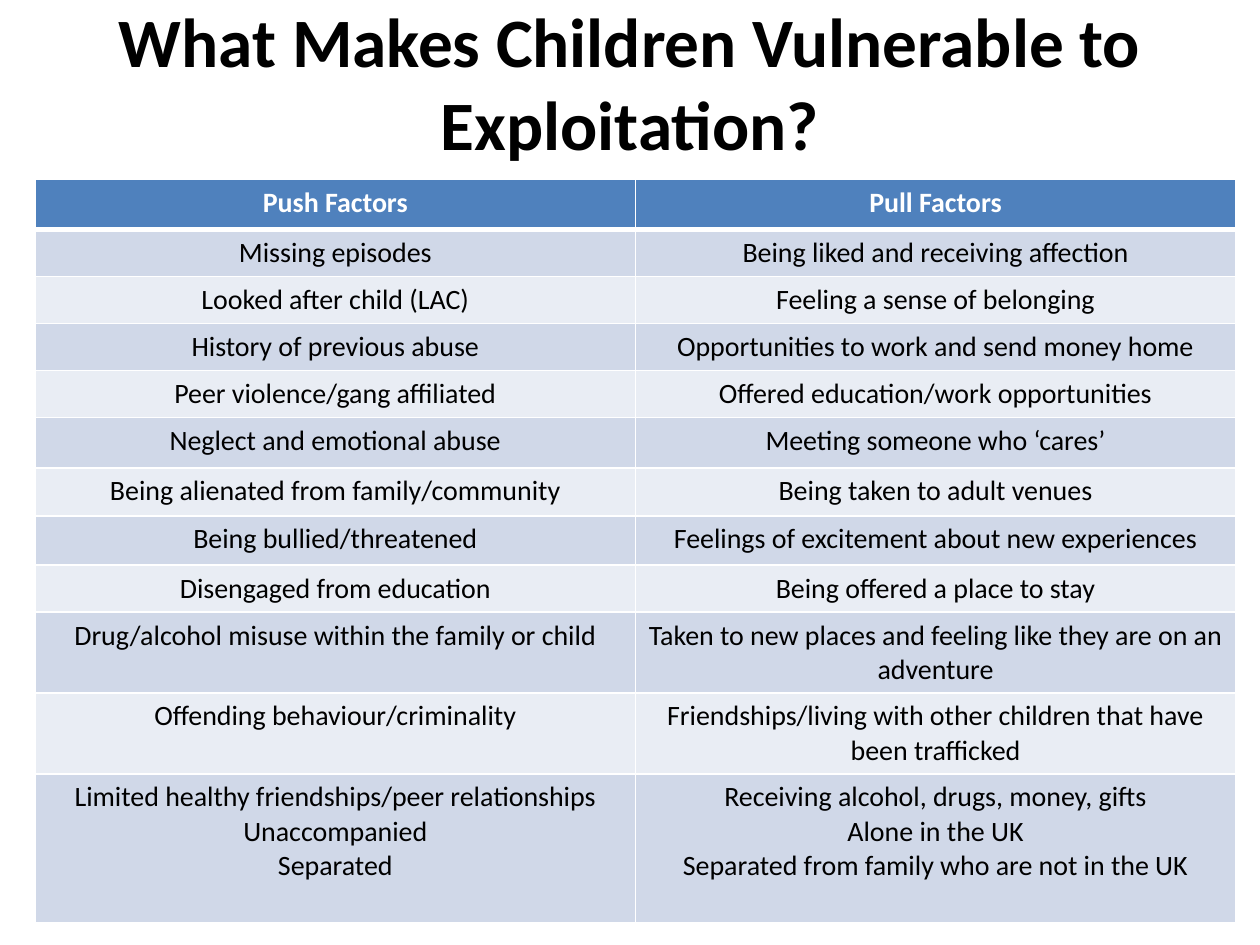
"""Build a slide with a table of the push and pull factors behind child exploitation."""
from dataclasses import dataclass

import pptx
import pptx.dml.color
import pptx.enum.text
import pptx.oxml
import pptx.oxml.ns
import pptx.util
from pptx.util import Cm

COLOURS = {
    "header": "4F81BD",
    "odd": "D0D8E8",
    "even": "E9EDF4",
    "white": "FFFFFF",
    "black": "000000",
}
FONT = "Calibri"
LINE_HEIGHT = 0.95


@dataclass
class Row:
    push: str
    pull: str
    height: float = LINE_HEIGHT


ROWS = [
    Row("Push Factors", "Pull Factors", 1.01),
    Row("Missing episodes", "Being liked and receiving affection"),
    Row("Looked after child (LAC)", "Feeling a sense of belonging"),
    Row("History of previous abuse", "Opportunities to work and send money home"),
    Row("Peer violence/gang affiliated", "Offered education/work opportunities"),
    Row("Neglect and emotional abuse", "Meeting someone who ‘cares’", 1.01),
    Row("Being alienated from family/community", "Being taken to adult venues", 0.97),
    Row("Being bullied/threatened", "Feelings of excitement about new experiences", 0.99),
    Row("Disengaged from education", "Being offered a place to stay"),
    Row("Drug/alcohol misuse within the family or child",
        "Taken to new places and feeling like they are on an adventure", 1.63),
    Row("Offending behaviour/criminality",
        "Friendships/living with other children that have been trafficked", 1.63),
    Row("Limited healthy friendships/peer relationships\nUnaccompanied\nSeparated",
        "Receiving alcohol, drugs, money, gifts\nAlone in the UK\n"
        "Separated from family who are not in the UK", 3),
]


def rgb(name: str) -> pptx.dml.color.RGBColor:
    return pptx.dml.color.RGBColor.from_string(COLOURS[name])


def write(tf, text: str, size: float, colour: str, bold: bool) -> None:
    for i, line in enumerate(text.split("\n")):
        p = tf.add_paragraph() if i else tf.paragraphs[0]
        p.alignment = pptx.enum.text.PP_ALIGN.CENTER
        r = p.add_run()
        r.text = line
        r.font.name = FONT
        r.font.size = pptx.util.Pt(size)
        r.font.bold = bold
        r.font.color.rgb = rgb(colour)


def add_borders(cell, widths: dict[str, float]) -> None:
    tc_pr = cell._tc.get_or_add_tcPr()
    for side, width in widths.items():
        tc_pr.append(pptx.oxml.parse_xml(
            f'<a:ln{side} {pptx.oxml.ns.nsdecls("a")} w="{pptx.util.Pt(width)}">'
            f'<a:solidFill><a:srgbClr val="{COLOURS["white"]}"/></a:solidFill>'
            f'</a:ln{side}>'))


def add_title(s, text: str) -> None:
    sp = s.shapes.add_textbox(Cm(1.27), Cm(0.53), Cm(22.86), Cm(2.21))
    tf = sp.text_frame
    tf.word_wrap = True
    tf.vertical_anchor = pptx.enum.text.MSO_ANCHOR.MIDDLE
    write(tf, text, 39.6, "black", True)


def add_factors(s, rows: list[Row]) -> None:
    height = sum(row.height for row in rows)
    table = s.shapes.add_table(
        len(rows), 2, Cm(0.71), Cm(3.61), Cm(24.2), Cm(height)).table
    for i, row in enumerate(rows):
        table.rows[i].height = Cm(row.height)
        header = i == 0
        fill = "header" if header else "odd" if i % 2 else "even"
        top, bottom = 3 if i == 1 else 1, 3 if header else 1
        for j, text in enumerate((row.push, row.pull)):
            cell = table.cell(i, j)
            add_borders(cell, {"L": 1, "R": 1, "T": top, "B": bottom})
            cell.fill.solid()
            cell.fill.fore_color.rgb = rgb(fill)
            write(cell.text_frame, text, 16, "white" if header else "black", header)


def main() -> None:
    prs = pptx.Presentation()
    prs.slide_width, prs.slide_height = Cm(25.4), Cm(19.05)
    s = prs.slides.add_slide(prs.slide_layouts[6])
    add_title(s, "What Makes Children Vulnerable to Exploitation?")
    add_factors(s, ROWS)
    prs.save("out.pptx")


if __name__ == "__main__":
    main()
